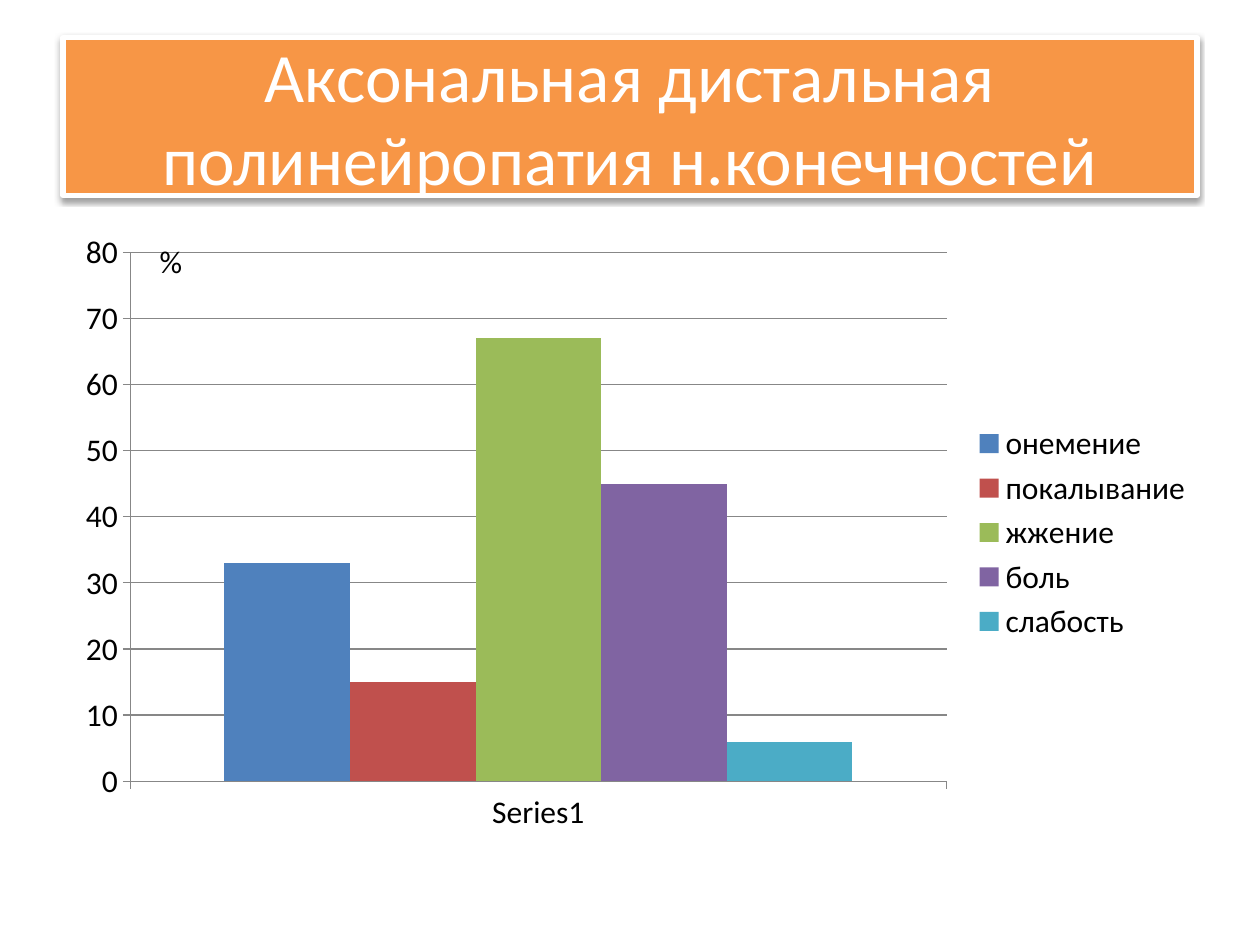
from dataclasses import dataclass
from typing import Any

from lxml import etree
from pptx import Presentation
from pptx.chart.data import CategoryChartData
from pptx.dml.color import RGBColor
from pptx.enum.chart import XL_CHART_TYPE, XL_LEGEND_POSITION, XL_TICK_MARK
from pptx.enum.text import MSO_ANCHOR, MSO_AUTO_SIZE, PP_ALIGN
from pptx.oxml.ns import qn
from pptx.util import Cm, Pt

COLUMNS = XL_CHART_TYPE.COLUMN_CLUSTERED
LEGEND_RIGHT = XL_LEGEND_POSITION.RIGHT
TICK_OUTSIDE = XL_TICK_MARK.OUTSIDE
TICK_NONE = XL_TICK_MARK.NONE
MIDDLE = MSO_ANCHOR.MIDDLE
CENTER = PP_ALIGN.CENTER
NO_AUTOFIT = MSO_AUTO_SIZE.NONE
GROW = MSO_AUTO_SIZE.SHAPE_TO_FIT_TEXT

FONT = "Calibri"
COLORS = {
    "white": "FFFFFF",
    "black": "000000",
    "orange": "F79646",
    "axis": "878787",
    "blue": "4F81BD",
    "red": "C0504D",
    "green": "9BBB59",
    "purple": "8064A2",
    "cyan": "4BACC6",
}


@dataclass(frozen=True)
class Box:
    left: float
    top: float
    width: float
    height: float

    def lengths(self) -> tuple[Cm, Cm, Cm, Cm]:
        return Cm(self.left), Cm(self.top), Cm(self.width), Cm(self.height)


@dataclass(frozen=True)
class Symptom:
    name: str
    percent: int
    color: str


TITLE_BOX = Box(1.27, 0.76, 22.86, 3.18)
CHART_BOX = Box(1.27, 4.45, 23.04, 12.57)
UNIT_BOX = Box(2.97, 4.75, 1.12, 1.02)
SYMPTOMS = [
    Symptom("онемение", 33, "blue"),
    Symptom("покалывание", 15, "red"),
    Symptom("жжение", 67, "green"),
    Symptom("боль", 45, "purple"),
    Symptom("слабость", 6, "cyan"),
]


def rgb(name: str) -> RGBColor:
    return RGBColor.from_string(COLORS[name])


def apply(target: Any, values: dict[str, Any]) -> None:
    for name, value in values.items():
        setattr(target, name, value)


def format_font(font: Any, size: float, color: str) -> None:
    apply(font, {"name": FONT, "size": Pt(size), "bold": False})
    font.color.rgb = rgb(color)


def format_line(line: Any, color: str, width: float) -> None:
    line.color.rgb = rgb(color)
    line.width = Pt(width)


def add_shadow(shape: Any) -> None:
    shape.shadow.inherit = False
    effects = shape.element.spPr.find(qn("a:effectLst"))
    shadow = etree.SubElement(
        effects, qn("a:outerShdw"), blurRad=str(Pt(3.1)), dist=str(Pt(1.6)),
        dir="5400000", rotWithShape="0",
    )
    color = etree.SubElement(shadow, qn("a:srgbClr"), val=COLORS["black"])
    etree.SubElement(color, qn("a:alpha"), val="38000")


def format_title(title: Any, text: str) -> None:
    left, top, width, height = TITLE_BOX.lengths()
    apply(title, {"left": left, "top": top, "width": width, "height": height})
    title.fill.solid()
    title.fill.fore_color.rgb = rgb("orange")
    format_line(title.line, "white", 3)
    add_shadow(title)
    frame = title.text_frame
    frame.text = text
    apply(frame, {"word_wrap": True, "auto_size": NO_AUTOFIT, "vertical_anchor": MIDDLE})
    paragraph = frame.paragraphs[0]
    paragraph.alignment = CENTER
    format_font(paragraph.runs[0].font, 39.6, "white")


def add_symptom_chart(slide: Any) -> None:
    data = CategoryChartData()
    data.categories = ["Series1"]
    for symptom in SYMPTOMS:
        data.add_series(symptom.name, [symptom.percent])
    chart = slide.shapes.add_chart(COLUMNS, *CHART_BOX.lengths(), data).chart
    apply(chart, {"has_title": False, "has_legend": True})
    format_font(chart.font, 18, "black")
    apply(chart.legend, {"position": LEGEND_RIGHT, "include_in_layout": False})

    plot = chart.plots[0]
    apply(plot, {"gap_width": 150, "overlap": 0, "vary_by_categories": False})
    for series, symptom in zip(plot.series, SYMPTOMS):
        series.format.fill.solid()
        series.format.fill.fore_color.rgb = rgb(symptom.color)
        series.invert_if_negative = False

    for axis in (chart.category_axis, chart.value_axis):
        apply(axis, {"major_tick_mark": TICK_OUTSIDE, "minor_tick_mark": TICK_NONE})
        format_line(axis.format.line, "axis", 0.75)
    apply(chart.value_axis, {
        "minimum_scale": 0, "maximum_scale": 80, "major_unit": 10,
        "has_major_gridlines": True,
    })
    format_line(chart.value_axis.major_gridlines.format.line, "axis", 0.75)


def add_unit_label(slide: Any, text: str) -> None:
    frame = slide.shapes.add_textbox(*UNIT_BOX.lengths()).text_frame
    frame.text = text
    apply(frame, {"word_wrap": False, "auto_size": GROW})
    format_font(frame.paragraphs[0].runs[0].font, 18, "black")


def main() -> None:
    presentation = Presentation()
    apply(presentation, {"slide_width": Cm(25.4), "slide_height": Cm(19.05)})
    slide = presentation.slides.add_slide(presentation.slide_layouts[5])
    format_title(slide.shapes.title, "Аксональная дистальная полинейропатия н.конечностей")
    add_symptom_chart(slide)
    add_unit_label(slide, "%")
    presentation.save("out.pptx")


if __name__ == "__main__":
    main()
